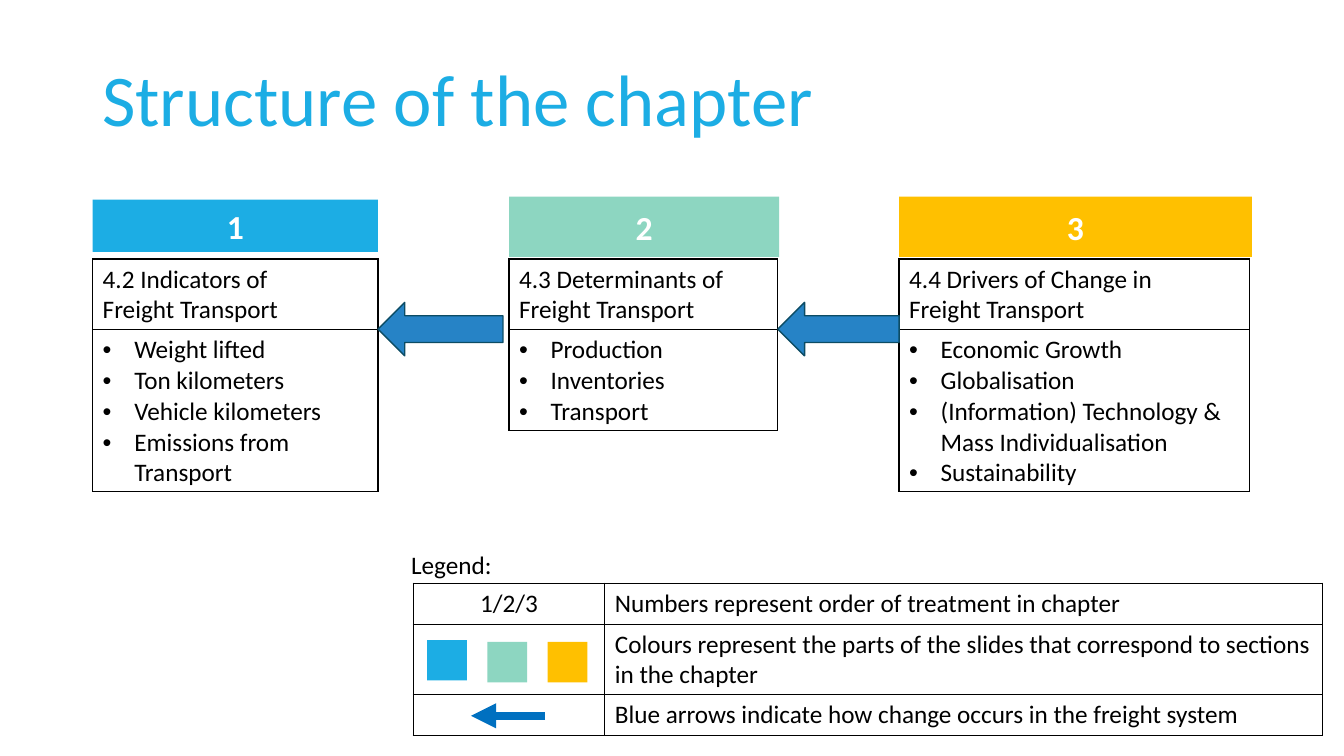
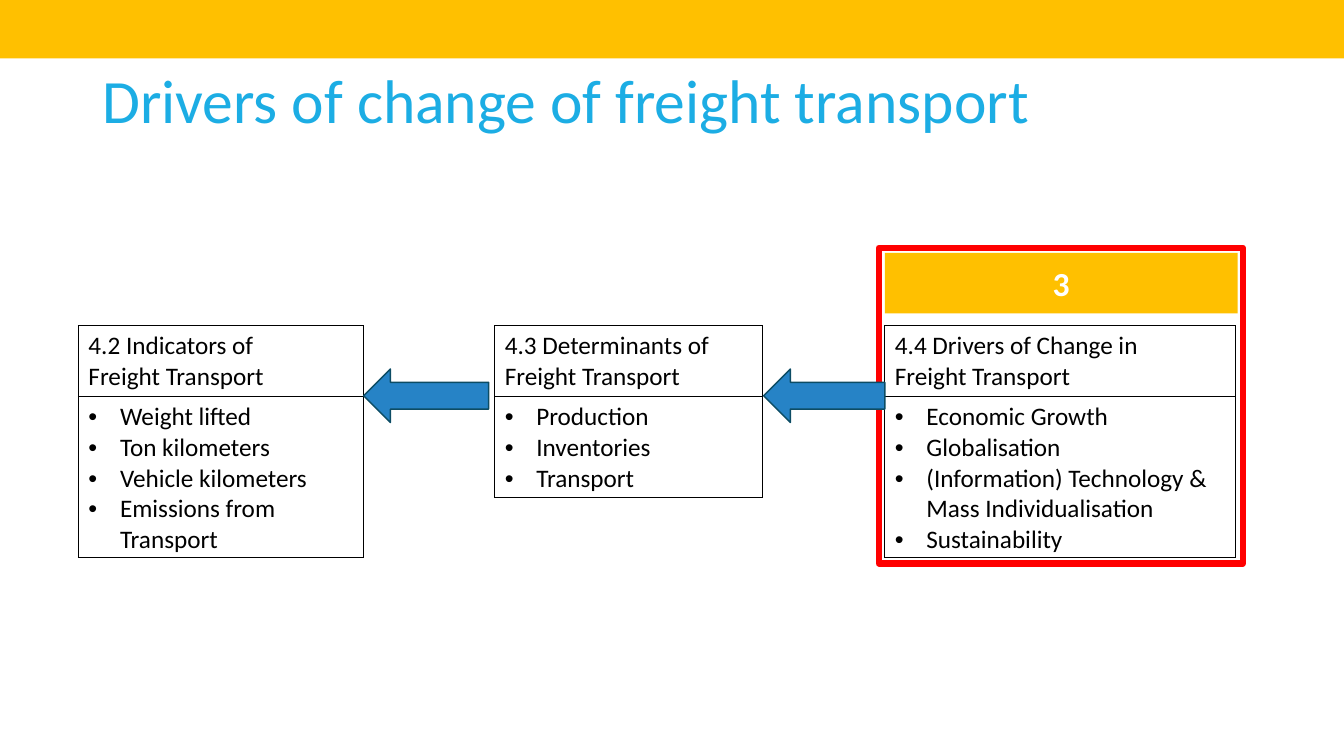
from dataclasses import dataclass

from lxml.etree import SubElement
from pptx import Presentation
from pptx.dml.color import RGBColor
from pptx.enum.shapes import MSO_CONNECTOR as Connector, MSO_SHAPE as Shape
from pptx.enum.text import MSO_ANCHOR as Anchor, PP_ALIGN as Align
from pptx.oxml import parse_xml
from pptx.oxml.ns import nsdecls, qn
from pptx.util import Pt


@dataclass(frozen=True)
class Theme:
    font: str = "Calibri"
    blue: RGBColor = RGBColor(0x1C, 0xAD, 0xE4)
    green: RGBColor = RGBColor(0x8D, 0xD6, 0xC1)
    yellow: RGBColor = RGBColor(0xFF, 0xC0, 0x00)
    arrow: RGBColor = RGBColor(0x26, 0x83, 0xC6)
    arrow_edge: RGBColor = RGBColor(0x0C, 0x4C, 0x64)
    legend_arrow: RGBColor = RGBColor(0x00, 0x70, 0xC0)
    highlight: RGBColor = RGBColor(0xFF, 0x00, 0x00)
    white: RGBColor = RGBColor(0xFF, 0xFF, 0xFF)
    black: RGBColor = RGBColor(0x00, 0x00, 0x00)
    number_size: int = 24
    body_size: int = 18


theme = Theme()


def add_box(slide, kind, left, top, width, height, fill=None, edge=None, edge_width=1):
    shape = slide.shapes.add_shape(kind, Pt(left), Pt(top), Pt(width), Pt(height))
    shape.shadow.inherit = False
    if fill is None:
        shape.fill.background()
    else:
        shape.fill.solid()
        shape.fill.fore_color.rgb = fill
    if edge is None:
        shape.line.fill.background()
    else:
        shape.line.color.rgb = edge
        shape.line.width = Pt(edge_width)
    return shape


def add_grid(slide, left, top, widths, heights, texts, fill=None):
    frame = slide.shapes.add_table(len(heights), len(widths), Pt(left), Pt(top),
                                   Pt(sum(widths)), Pt(sum(heights)))
    table = frame.table
    table.first_row = table.horz_banding = False
    for column, width in zip(table.columns, widths):
        column.width = Pt(width)
    for row, height in zip(table.rows, heights):
        row.height = Pt(height)
    for cell, text in zip(table.iter_cells(), texts):
        cell.text = text
        if fill is None:
            cell.fill.background()
        else:
            cell.fill.solid()
            cell.fill.fore_color.rgb = fill
        for position, side in enumerate(("lnL", "lnR", "lnT", "lnB")):
            cell._tc.tcPr.insert(position, parse_xml(
                f'<a:{side} {nsdecls("a")} w="{Pt(1)}"><a:solidFill>'
                f'<a:srgbClr val="{theme.black}"/></a:solidFill></a:{side}>'))
        for paragraph in cell.text_frame.paragraphs:
            paragraph.font.name = theme.font
            paragraph.font.size = Pt(theme.body_size)
            paragraph.font.color.rgb = theme.black
    return table


presentation = Presentation()
presentation.slide_width, presentation.slide_height = Pt(960), Pt(540)

slides = []
for title, title_size in (("Structure of the chapter", 52),
                          ("Drivers of change of freight transport", 44)):
    slide = presentation.slides.add_slide(presentation.slide_layouts[6])
    slides.append(slide)
    title_box = slide.shapes.add_textbox(Pt(66), Pt(14.4), Pt(828), Pt(118.8))
    title_box.text_frame.word_wrap = True
    title_box.text_frame.vertical_anchor = Anchor.MIDDLE
    paragraph = title_box.text_frame.paragraphs[0]
    paragraph.text = title
    paragraph.line_spacing = 0.9
    paragraph.space_after = Pt(6)
    paragraph.font.name = theme.font
    paragraph.font.size = Pt(title_size)
    paragraph.font.color.rgb = theme.blue
structure_slide, drivers_slide = slides

add_box(drivers_slide, Shape.RECTANGLE, 0, -1.4, 960, 43.2, theme.yellow)
add_box(drivers_slide, Shape.RECTANGLE, 627.8, 177.1, 260, 225.4,
        edge=theme.highlight, edge_width=4.5)

sections = (
    ("1", theme.blue, 66.2, 203.8, 203.8, 2.2, 37.4, 115,
     "4.2 Indicators of\vFreight Transport",
     "Weight lifted\nTon kilometers\nVehicle kilometers\nEmissions from Transport"),
    ("2", theme.green, 363.6, 191.5, 193, 0, 43.2, 72,
     "4.3 Determinants of Freight Transport",
     "Production\nInventories\nTransport"),
    ("3", theme.yellow, 642.2, 250.6, 252, 0, 43.2, 115,
     "4.4 Drivers of Change in\vFreight Transport",
     "Economic Growth\nGlobalisation\n(Information) Technology & Mass Individualisation\n"
     "Sustainability"),
)
for slide, shift, flow_top, band_top, shown in (
        (structure_slide, 0, 185, 140.4, "123"),
        (drivers_slide, -10.2, 232.6, 180.7, "3")):
    for (number, color, left, width, band_width, band_drop, band_height,
         list_height, heading, topics) in sections:
        if number in shown:
            band = add_box(slide, Shape.RECTANGLE, left + shift, band_top + band_drop,
                           band_width, band_height, color)
            paragraph = band.text_frame.paragraphs[0]
            paragraph.text = number
            paragraph.alignment = Align.CENTER
            paragraph.font.name = theme.font
            paragraph.font.size = Pt(theme.number_size)
            paragraph.font.bold = True
            paragraph.font.color.rgb = theme.white
        table = add_grid(slide, left + shift, flow_top, [width], [50.6, list_height],
                         [heading, topics], theme.white)
        for paragraph in table.cell(1, 0).text_frame.paragraphs:
            properties = paragraph._p.get_or_add_pPr()
            properties.set("marL", str(Pt(22.5)))
            properties.set("indent", str(-Pt(22.5)))
            bullet = parse_xml(f'<a:buChar {nsdecls("a")} char="•"/>')
            properties.insert(0, bullet)
            bullet.addprevious(parse_xml(f'<a:buFont {nsdecls("a")} typeface="Arial"/>'))
    for left, width in ((270, 89.3), (555.6, 86.6)):
        add_box(slide, Shape.LEFT_ARROW, left + shift, flow_top + 31, width, 38.2,
                theme.arrow, theme.arrow_edge)

legend_box = structure_slide.shapes.add_textbox(Pt(286.6), Pt(388.8), Pt(160.6), Pt(28.8))
legend_box.text_frame.word_wrap = True
paragraph = legend_box.text_frame.paragraphs[0]
paragraph.text = "Legend:"
paragraph.font.name = theme.font
paragraph.font.size = Pt(theme.body_size)
paragraph.font.color.rgb = theme.black

legend = add_grid(
    structure_slide, 295.2, 416.6, [136.8, 512.6], [29.2, 50.2, 29.2],
    ["1/2/3", "Numbers represent order of treatment in chapter",
     "", "Colours represent the parts of the slides that correspond to sections in the chapter",
     "", "Blue arrows indicate how change occurs in the freight system"])
legend.cell(0, 0).text_frame.paragraphs[0].alignment = Align.CENTER

for index, (color, top) in enumerate(((theme.blue, 457.2), (theme.green, 458.6),
                                      (theme.yellow, 458.6))):
    add_box(structure_slide, Shape.RECTANGLE, 305.2 + 43 * index, top, 28.4, 28.8, color)

connector = structure_slide.shapes.add_connector(
    Connector.STRAIGHT, Pt(389.4), Pt(511.3), Pt(336.4), Pt(511.3))
connector.line.color.rgb = theme.legend_arrow
connector.line.width = Pt(6)
connector_properties = connector.element.spPr
SubElement(connector_properties.find(qn("a:ln")), qn("a:tailEnd"), type="triangle")
SubElement(connector_properties, qn("a:effectLst"))

presentation.save("out.pptx")
